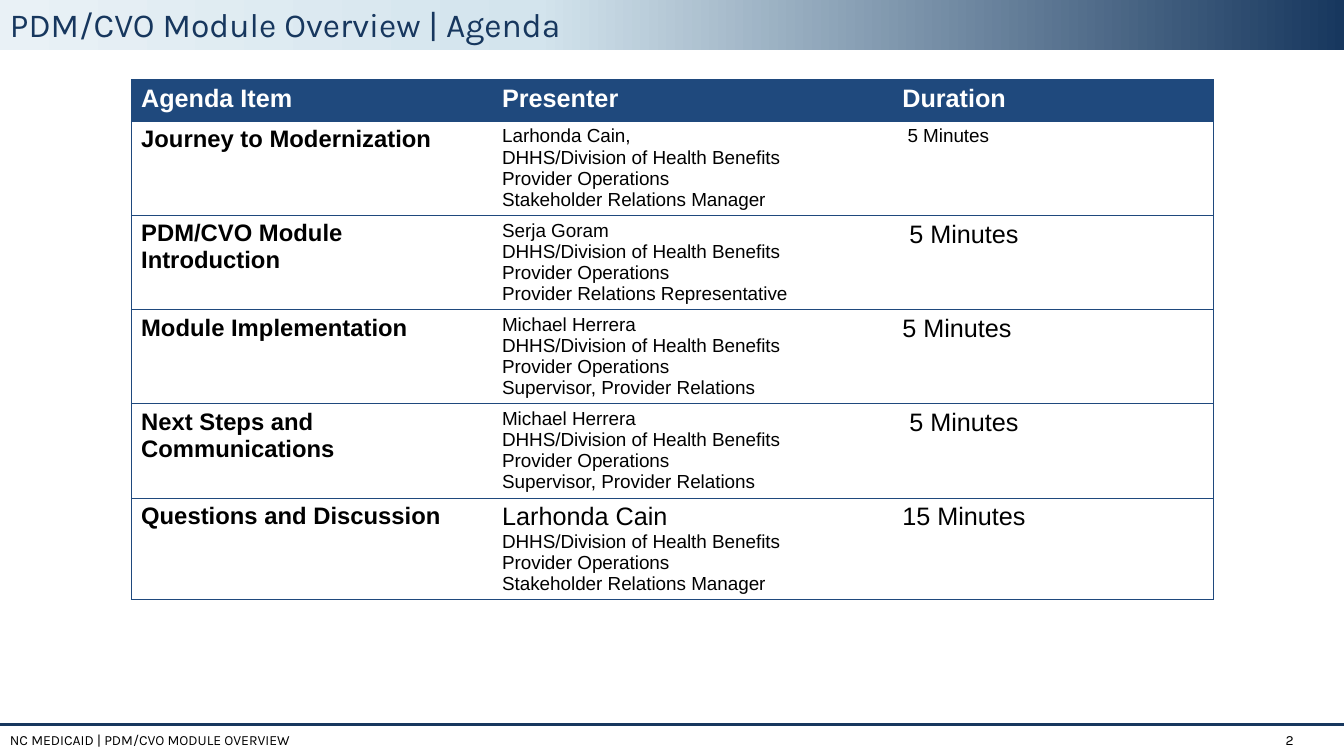
from dataclasses import dataclass

import lxml.etree
import pptx
import pptx.dml.color
import pptx.enum.shapes
import pptx.enum.text
import pptx.oxml
import pptx.oxml.ns
import pptx.util

Inches = pptx.util.Inches
Pt = pptx.util.Pt
RGBColor = pptx.dml.color.RGBColor
qn = pptx.oxml.ns.qn

NAVY = RGBColor(0x17, 0x37, 0x5E)
BLUE = RGBColor(0x1F, 0x49, 0x7D)
PALE_BLUE = RGBColor(0xD3, 0xE4, 0xED)
ICE = RGBColor(0xE9, 0xF1, 0xF6)
WHITE = RGBColor(0xFF, 0xFF, 0xFF)
BLACK = RGBColor(0, 0, 0)

SLIDE_WIDTH = 13.33
FOOTER_TOP = 7.19
FOOTER_HEIGHT = 0.31
HEADER_HEIGHT = 0.41
COLUMN_WIDTHS = (3.58, 3.97, 3.18)
HEADINGS = ("Agenda Item", "Presenter", "Duration")
DIVISION = ("DHHS/Division of Health Benefits", "Provider Operations")


@dataclass(frozen=True)
class Label:
    text: str
    left: float
    top: float
    width: float
    height: float
    size: float
    color: RGBColor
    anchor: pptx.enum.text.MSO_ANCHOR = pptx.enum.text.MSO_ANCHOR.MIDDLE
    alignment: pptx.enum.text.PP_ALIGN = pptx.enum.text.PP_ALIGN.LEFT


@dataclass(frozen=True)
class AgendaItem:
    topic: str
    presenter: str
    role: str
    duration: str
    presenter_size: float = 13.5
    duration_size: float = 18
    height: float = 0.93


LABELS = (
    Label("PDM/CVO Module Overview | Agenda", 0, -0.01, 12.98, 0.5, 24, NAVY,
          anchor=pptx.enum.text.MSO_ANCHOR.TOP),
    Label("NC MEDICAID | PDM/CVO MODULE OVERVIEW",
          0, FOOTER_TOP, 11.2, FOOTER_HEIGHT, 10, BLACK),
    Label("2", 12.11, FOOTER_TOP, 0.82, FOOTER_HEIGHT, 10, BLACK,
          alignment=pptx.enum.text.PP_ALIGN.RIGHT),
)

AGENDA = (
    AgendaItem("Journey to Modernization", "Larhonda Cain,",
               "Stakeholder Relations Manager", " 5 Minutes", duration_size=13.5),
    AgendaItem("PDM/CVO Module Introduction", "Serja Goram",
               "Provider Relations Representative", " 5 Minutes"),
    AgendaItem("Module Implementation", "Michael Herrera",
               "Supervisor, Provider Relations", "5 Minutes"),
    AgendaItem("Next Steps and Communications", "Michael Herrera",
               "Supervisor, Provider Relations", " 5 Minutes"),
    AgendaItem("Questions and Discussion", "Larhonda Cain",
               "Stakeholder Relations Manager", "15 Minutes",
               presenter_size=18, height=1.01),
)


def style_font(font, name: str, size: float, color: RGBColor, bold: bool = False) -> None:
    font.name = name
    font.size = Pt(size)
    font.bold = bold
    font.color.rgb = color


def add_banner(slide) -> None:
    banner = slide.shapes.add_shape(
        pptx.enum.shapes.MSO_SHAPE.RECTANGLE, 0, 0, Inches(SLIDE_WIDTH), Inches(0.5))
    banner.shadow.inherit = False
    banner.line.fill.background()
    banner.fill.gradient()
    banner.fill.gradient_angle = 180
    stops = banner._element.spPr.find(".//" + qn("a:gsLst"))
    stops.clear()
    for percent, color in ((0, NAVY), (60, PALE_BLUE), (100, ICE)):
        stop = lxml.etree.SubElement(stops, qn("a:gs"), pos=str(percent * 1000))
        lxml.etree.SubElement(stop, qn("a:srgbClr"), val=str(color))


def add_footer_rule(slide) -> None:
    rule = slide.shapes.add_connector(
        pptx.enum.shapes.MSO_CONNECTOR.STRAIGHT,
        0, Inches(FOOTER_TOP), Inches(SLIDE_WIDTH), Inches(FOOTER_TOP))
    rule.line.color.rgb = NAVY
    rule.line.width = Pt(2.25)
    lxml.etree.SubElement(rule._element.spPr, qn("a:effectLst"))


def add_label(slide, label: Label) -> None:
    shape = slide.shapes.add_textbox(
        Inches(label.left), Inches(label.top), Inches(label.width), Inches(label.height))
    frame = shape.text_frame
    frame.word_wrap = True
    frame.vertical_anchor = label.anchor
    paragraph = frame.paragraphs[0]
    paragraph.text = label.text
    paragraph.alignment = label.alignment
    style_font(paragraph.font, "Karla", label.size, label.color)


def set_borders(cell, visible_sides: str) -> None:
    properties = cell._tc.get_or_add_tcPr()
    for index, side in enumerate("LRTB"):
        border = pptx.oxml.parse_xml(
            f'<a:ln{side} xmlns:a="{pptx.oxml.ns.nsdecls("a").split(chr(34))[1]}" w="6350"/>')
        if side in visible_sides:
            fill = lxml.etree.SubElement(border, qn("a:solidFill"))
            lxml.etree.SubElement(fill, qn("a:srgbClr"), val=str(BLUE))
        else:
            lxml.etree.SubElement(border, qn("a:noFill"))
        properties.insert(index, border)


def fill_cell(cell, lines: tuple[str, ...], sizes: tuple[float, ...],
              color: RGBColor, bold: bool) -> None:
    cell.text = "\n".join(lines)
    for paragraph, size in zip(cell.text_frame.paragraphs, sizes):
        style_font(paragraph.font, "Arial", size, color, bold)


def add_agenda(slide) -> None:
    heights = (HEADER_HEIGHT, *(item.height for item in AGENDA))
    table = slide.shapes.add_table(
        len(heights), len(COLUMN_WIDTHS), Inches(1.3), Inches(0.79),
        Inches(sum(COLUMN_WIDTHS)), Inches(sum(heights))).table
    table.first_row = False
    table.horz_banding = False
    for column, width in zip(table.columns, COLUMN_WIDTHS):
        column.width = Inches(width)
    for row, height in zip(table.rows, heights):
        row.height = Inches(height)
        for cell, outer_side in zip(row.cells, ("L", "", "R")):
            cell.fill.background()
            set_borders(cell, "TB" + outer_side)
    for cell, heading in zip(table.rows[0].cells, HEADINGS):
        cell.fill.solid()
        cell.fill.fore_color.rgb = BLUE
        fill_cell(cell, (heading,), (18,), WHITE, True)
    for row_index, item in enumerate(AGENDA, start=1):
        topic, presenter, duration = table.rows[row_index].cells
        fill_cell(topic, (item.topic,), (17,), BLACK, True)
        fill_cell(presenter, (item.presenter, *DIVISION, item.role),
                  (item.presenter_size, 13.5, 13.5, 13.5), BLACK, False)
        fill_cell(duration, (item.duration,), (item.duration_size,), BLACK, False)


def main() -> None:
    presentation = pptx.Presentation()
    presentation.slide_width = Inches(SLIDE_WIDTH)
    presentation.slide_height = Inches(7.5)
    slide = presentation.slides.add_slide(presentation.slide_layouts[6])
    add_banner(slide)
    add_footer_rule(slide)
    add_agenda(slide)
    for label in LABELS:
        add_label(slide, label)
    presentation.save("out.pptx")


if __name__ == "__main__":
    main()
